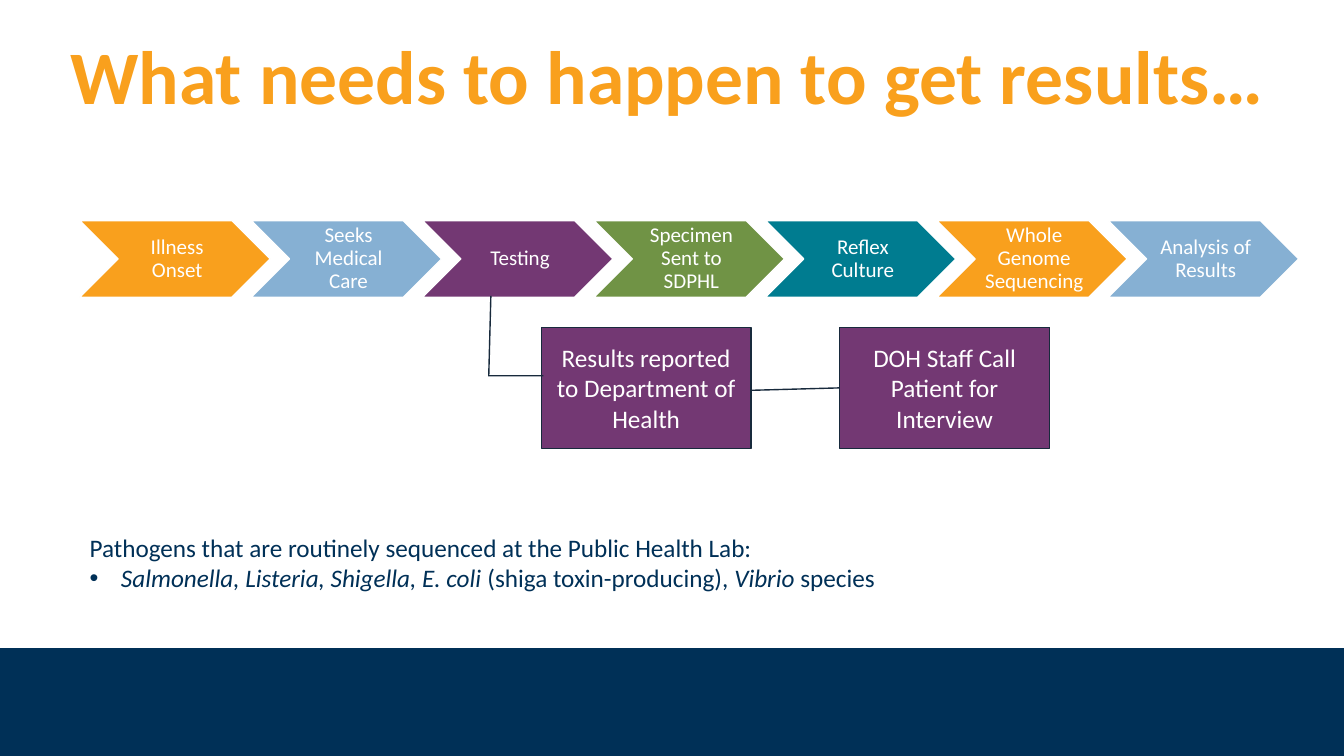
from lxml import etree
from pptx import Presentation
from pptx import util as u
from pptx.dml.color import RGBColor
from pptx.enum import shapes, text
from pptx.oxml.ns import qn

ORANGE, BLUE, PURPLE = "F9A01D", "86B0D3", "733873"
GREEN, TEAL, NAVY, WHITE, INK = "709345", "007C90", "003057", "FFFFFF", "182A3C"
FONT = "Calibri"
CENTER = text.PP_ALIGN.CENTER

TITLE = "What needs to happen to get results…"
STEPS = [
    ("Illness Onset", ORANGE),
    ("Seeks Medical Care", BLUE),
    ("Testing", PURPLE),
    ("Specimen Sent to SDPHL", GREEN),
    ("Reflex Culture", TEAL),
    ("Whole Genome Sequencing", ORANGE),
    ("Analysis of Results", BLUE),
]
CALLOUTS = [
    ("Results reported to Department of Health", 13.64,
     shapes.MSO_SHAPE.LINE_CALLOUT_2, (0.4, 0.01, 0.4, -0.25, -0.26, -0.24)),
    ("DOH Staff Call Patient for Interview", 21.16,
     shapes.MSO_SHAPE.LINE_CALLOUT_1, (0.5, 0, 0.52, -0.42)),
]
PATHOGEN_HEADING = "Pathogens that are routinely sequenced at the Public Health Lab:"
PATHOGENS = [
    ("Salmonella, Listeria, Shigella, E. coli ", True),
    ("(shiga toxin-producing), ", False),
    ("Vibrio ", True),
    ("species", False),
]

STEP_LEFT, STEP_TOP, STEP_PITCH = 2.01, 5.56, 4.32
STEP_SIZE = (4.8, 1.93)
CALLOUT_TOP = 8.25
CALLOUT_SIZE = (5.29, 3.05)


def color(value):
    return RGBColor.from_string(value)


def add_span(para, words, size, ink, bold=False, italic=False):
    span = para.add_run()
    span.text = words
    span.font.name = FONT
    span.font.size = u.Pt(size)
    span.font.color.rgb = color(ink)
    span.font.bold = bold
    span.font.italic = italic


def add_box(page, left, top, width, height):
    box = page.shapes.add_textbox(u.Cm(left), u.Cm(top), u.Cm(width), u.Cm(height))
    box.text_frame.word_wrap = True
    return box.text_frame


def add_block(page, kind, left, top, size, fill, line=None):
    block = page.shapes.add_shape(kind, u.Cm(left), u.Cm(top), *map(u.Cm, size))
    block.shadow.inherit = False
    block.fill.solid()
    block.fill.fore_color.rgb = color(fill)
    if line:
        block.line.color.rgb = color(line)
        block.line.width = u.Pt(1)
    else:
        block.line.fill.background()
    return block


def add_label(block, words, size):
    frame = block.text_frame
    frame.word_wrap = True
    frame.vertical_anchor = text.MSO_ANCHOR.MIDDLE
    para = frame.paragraphs[0]
    para.alignment = CENTER
    add_span(para, words, size, WHITE)
    return frame


def add_bullet(para, indent):
    props = para._p.get_or_add_pPr()
    props.set("marL", str(u.Cm(indent)))
    props.set("indent", str(-u.Cm(indent)))
    etree.SubElement(props, qn("a:buFont")).set("typeface", "Arial")
    etree.SubElement(props, qn("a:buChar")).set("char", "•")


def add_steps(page):
    for index, (words, fill) in enumerate(STEPS):
        left = STEP_LEFT + index * STEP_PITCH
        chevron = add_block(page, shapes.MSO_SHAPE.CHEVRON, left, STEP_TOP,
                            STEP_SIZE, fill, WHITE)
        frame = add_label(chevron, words, 15)
        frame.margin_left = u.Cm(0.17)
        frame.margin_top = frame.margin_right = frame.margin_bottom = u.Cm(0.06)
        frame.paragraphs[0].line_spacing = 0.9


def add_callouts(page):
    for words, left, kind, points in CALLOUTS:
        callout = add_block(page, kind, left, CALLOUT_TOP, CALLOUT_SIZE, PURPLE, INK)
        for index, point in enumerate(points):
            callout.adjustments[index] = point
        add_label(callout, words, 18)


def add_pathogens(page):
    frame = add_box(page, 2.01, 13.28, 20.78, 1.8)
    add_span(frame.paragraphs[0], PATHOGEN_HEADING, 18, NAVY)
    para = frame.add_paragraph()
    add_bullet(para, 0.79)
    for words, italic in PATHOGENS:
        add_span(para, words, 18, NAVY, italic=italic)


def main():
    deck = Presentation()
    deck.slide_width, deck.slide_height = u.Cm(33.87), u.Cm(19.05)
    page = deck.slides.add_slide(deck.slide_layouts[6])
    add_block(page, shapes.MSO_SHAPE.RECTANGLE, 0, 16.33, (33.87, 2.72), NAVY)
    heading = add_box(page, 1.52, 0.86, 31.22, 1.98).paragraphs[0]
    heading.line_spacing = 0.9
    add_span(heading, TITLE, 54, ORANGE, bold=True)
    add_steps(page)
    add_pathogens(page)
    add_callouts(page)
    deck.save("out.pptx")


if __name__ == "__main__":
    main()
